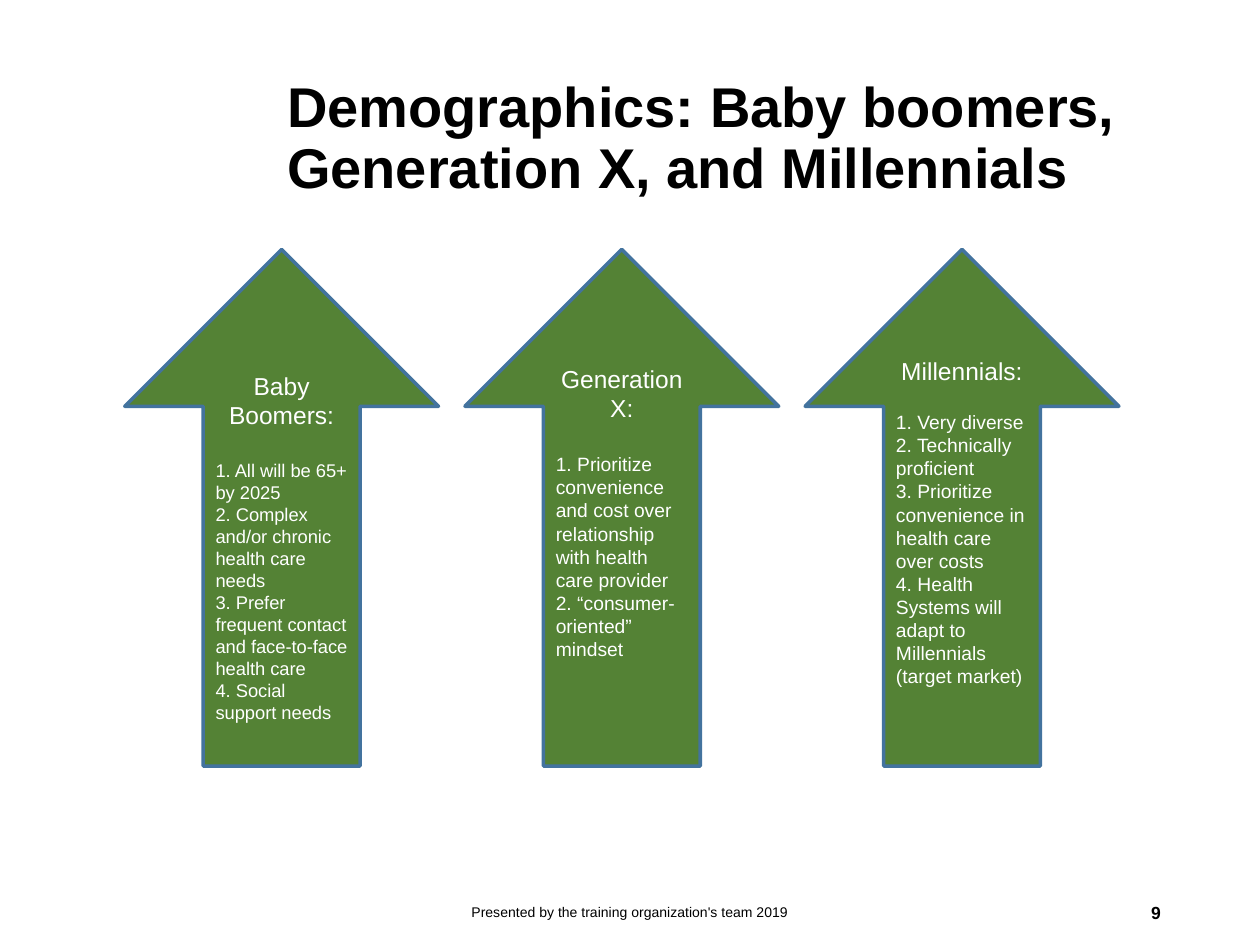
from pptx import Presentation
from pptx.dml.color import RGBColor
from pptx.enum import shapes, text
from pptx.util import Inches, Pt

BLACK = RGBColor(0x00, 0x00, 0x00)
WHITE = RGBColor(0xFF, 0xFF, 0xFF)
GREEN = RGBColor(0x54, 0x82, 0x35)
BLUE = RGBColor(0x43, 0x73, 0x9E)
LEFT, CENTER, RIGHT = text.PP_ALIGN.LEFT, text.PP_ALIGN.CENTER, text.PP_ALIGN.RIGHT
MIDDLE, BOTTOM = text.MSO_ANCHOR.MIDDLE, text.MSO_ANCHOR.BOTTOM

ARROW_LEFT, ARROW_STEP = 0.99, 2.7
GENERATIONS = [
    {"heading": "Baby Boomers:", "gap": 17, "size": 10.5, "bottom": 0.05,
     "points": ["1. All will be 65+ by 2025",
                "2. Complex and/or chronic health care needs",
                "3. Prefer frequent contact and face-to-face health care",
                "4. Social support needs"]},
    {"heading": "Generation X:", "gap": 17, "size": 11, "bottom": 0.6,
     "points": ["1. Prioritize convenience and cost over relationship with health care provider",
                "2. “consumer-oriented” mindset"]},
    {"heading": "Millennials:", "gap": 14.5, "size": 11, "bottom": 0.45,
     "points": ["1. Very diverse",
                "2. Technically proficient",
                "3. Prioritize convenience in health care over costs",
                "4. Health Systems will adapt to Millennials (target market)"]},
]


def apply_format(target, values):
    """Set each named attribute on the target."""
    for name, value in values.items():
        setattr(target, name, value)


def write_paragraph(paragraph, words, size, color, bold=False, **layout):
    """Fill a paragraph with one formatted run."""
    run = paragraph.add_run()
    run.text = words
    apply_format(run.font, {"name": "Arial", "size": Pt(size), "bold": bold})
    run.font.color.rgb = color
    apply_format(paragraph, layout)


def add_label(slide, box, words, size, bold=False, anchor=MIDDLE, bottom=0.05, **layout):
    """Add a wrapped text box holding one paragraph."""
    frame = slide.shapes.add_textbox(*map(Inches, box)).text_frame
    apply_format(frame, {"word_wrap": True, "vertical_anchor": anchor,
                         "margin_bottom": Inches(bottom)})
    write_paragraph(frame.paragraphs[0], words, size, BLACK, bold, **layout)


def add_generation_arrow(slide, left, generation):
    """Add an up arrow with a heading and its numbered points."""
    arrow = slide.shapes.add_shape(shapes.MSO_SHAPE.UP_ARROW, Inches(left),
                                   Inches(1.98), Inches(2.49), Inches(4.1))
    arrow.shadow.inherit = False
    arrow.fill.solid()
    arrow.fill.fore_color.rgb = GREEN
    arrow.line.color.rgb = BLUE
    arrow.line.width = Pt(2)
    frame = arrow.text_frame
    apply_format(frame, {"word_wrap": True, "vertical_anchor": MIDDLE,
                         "margin_bottom": Inches(generation["bottom"])})
    write_paragraph(frame.paragraphs[0], generation["heading"], 14, WHITE,
                    alignment=CENTER, space_after=Pt(generation["gap"]))
    for point in generation["points"]:
        write_paragraph(frame.add_paragraph(), point, generation["size"], WHITE,
                        alignment=LEFT)


def main():
    """Build and save the demographics slide."""
    deck = Presentation()
    deck.slide_width, deck.slide_height = Inches(10), Inches(7.5)
    slide = deck.slides.add_slide(deck.slide_layouts[6])
    add_label(slide, (2.18, 1.09, 7.14, 0.63),
              "Demographics: Baby boomers, Generation X, and Millennials", 32,
              bold=True, anchor=BOTTOM, bottom=0.13, line_spacing=0.9)
    add_label(slide, (7.06, 7.04, 2.25, 0.4), "9", 10, bold=True, alignment=RIGHT)
    for column, generation in enumerate(GENERATIONS):
        add_generation_arrow(slide, ARROW_LEFT + column * ARROW_STEP, generation)
    add_label(slide, (3.31, 7.04, 3.38, 0.4),
              "Presented by the training organization's team 2019", 8, alignment=CENTER)
    deck.save("out.pptx")


if __name__ == "__main__":
    main()
